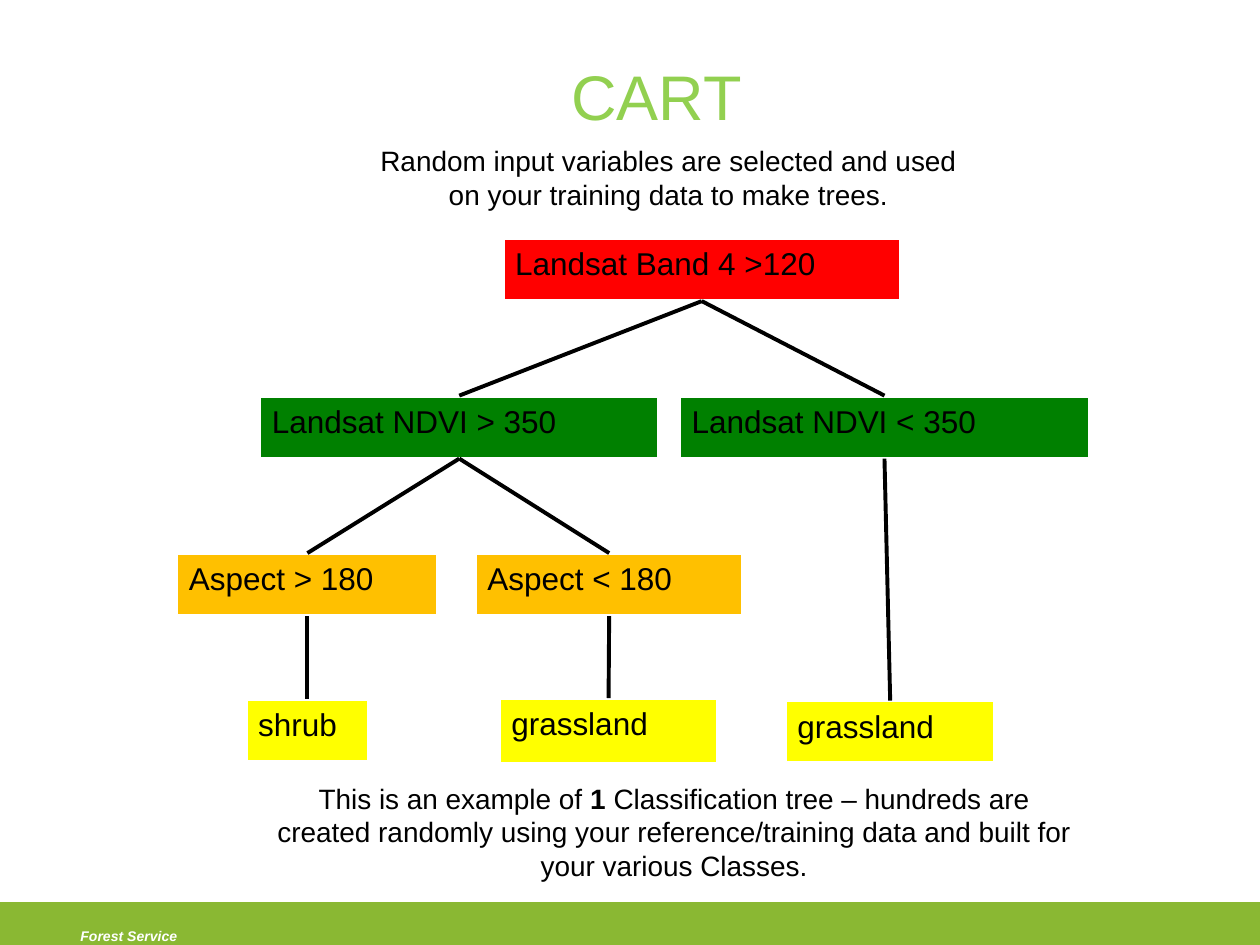
import pptx
import pptx.dml.color
import pptx.enum.shapes
import pptx.enum.text
import pptx.oxml.ns
import pptx.util
from lxml import etree

COLS, ROWS = 100, 75
PITCH = pptx.util.Inches(0.1)
COLORS = {"black": "000000", "white": "FFFFFF", "title": "92D050", "bar": "8AB833",
          "root": "FF0000", "ndvi": "008000", "aspect": "FFC000", "leaf": "FFFF00"}
ALIGN = pptx.enum.text.PP_ALIGN
ANCHOR = pptx.enum.text.MSO_ANCHOR

# name: text, colour, column, row, columns wide, rows high, parent
NODES = {
    "band": ("Landsat Band 4 >120", "root", 25.9, 0, 31.6, 5, None),
    "ndvi_high": ("Landsat NDVI > 350", "ndvi", 6.6, 12.5, 31.7, 5, "band"),
    "ndvi_low": ("Landsat NDVI < 350", "ndvi", 39.9, 12.5, 32.6, 5, "band"),
    "aspect_high": ("Aspect > 180", "aspect", 0, 25, 20.8, 5, "ndvi_high"),
    "aspect_low": ("Aspect < 180", "aspect", 23.7, 25, 21.3, 5, "ndvi_high"),
    "shrub": ("shrub", "leaf", 5.5, 36.6, 9.8, 5, "aspect_high"),
    "grass_mid": ("grassland", "leaf", 25.6, 36.5, 17.4, 5.2, "aspect_low"),
    "grass_right": ("grassland", "leaf", 48.3, 36.7, 16.7, 5, "ndvi_low"),
}


def rgb(name):
    """Return the named colour."""
    return pptx.dml.color.RGBColor.from_string(COLORS[name])


def emu(box):
    """Turn a box in columns and rows into slide lengths."""
    return [round(v * PITCH) for v in box]


def write(s, runs, color="black", align=ALIGN.LEFT, anchor=ANCHOR.TOP, **font):
    """Write one paragraph of (text, format) runs in a shape."""
    tf = s.text_frame
    tf.word_wrap, tf.vertical_anchor = True, anchor
    p = tf.paragraphs[0]
    p.alignment = align
    for text, extra in runs:
        r = p.add_run()
        r.text = text
        r.font.color.rgb = rgb(color)
        for key, value in {"name": "Arial", **font, **extra}.items():
            setattr(r.font, key, value)


def add_rect(slide, box, fill, line, width):
    """Add a flat rectangle."""
    s = slide.shapes.add_shape(pptx.enum.shapes.MSO_SHAPE.RECTANGLE, *emu(box))
    s.shadow.inherit = False
    s.fill.solid()
    s.fill.fore_color.rgb = rgb(fill)
    s.line.color.rgb = rgb(line)
    s.line.width = pptx.util.Pt(width)
    return s


def add_branch(slide, parent, child):
    """Join the bottom of a parent node to the top of its child."""
    kind = pptx.enum.shapes.MSO_CONNECTOR.STRAIGHT
    c = slide.shapes.add_connector(kind, 0, 0, 0, 0)
    c.begin_connect(parent, 2)
    c.end_connect(child, 0)
    c.line.color.rgb = rgb("black")
    c.line.width = pptx.util.Pt(2.25)
    etree.SubElement(c._element.spPr, pptx.oxml.ns.qn("a:effectLst"))


def add_title(slide, box):
    """Place and format the title."""
    s = slide.shapes.title
    s.left, s.top, s.width, s.height = emu(box)
    write(s, [("CART", {})], "title", ALIGN.CENTER, ANCHOR.MIDDLE, size=pptx.util.Pt(36))


def add_note(slide, box, runs):
    """Add a centred line of explanation."""
    s = slide.shapes.add_textbox(*emu(box))
    write(s, runs, align=ALIGN.CENTER, size=pptx.util.Pt(16))


def add_tree(slide, box):
    """Draw the decision tree from the corner of its box."""
    x, y = box
    shapes = {}
    for name, (text, fill, col, row, w, h, parent) in NODES.items():
        s = add_rect(slide, (x + col, y + row, w, h), fill, "white", 2.25)
        write(s, [(text, {})], size=pptx.util.Pt(18))
        shapes[name] = s
        if parent:
            add_branch(slide, shapes[parent], s)


def add_footer(slide, box):
    """Draw the bar at the foot with the name of the service."""
    x, y, w, h = box
    add_rect(slide, box, "bar", "bar", 2.08)
    s = slide.shapes.add_textbox(*emu((x + 5.4, y + 1.4, 20.4, 2.4)))
    write(s, [("Forest Service", {})], "white", size=pptx.util.Pt(8), bold=True, italic=True)


def main():
    """Build the slide."""
    prs = pptx.Presentation()
    prs.slide_width, prs.slide_height = COLS * PITCH, ROWS * PITCH
    slide = prs.slides.add_slide(prs.slide_layouts[5])
    add_footer(slide, (0, 71.7, COLS, 3.6))
    add_title(slide, (7.5, 2.4, 89.2, 10.3))
    add_tree(slide, (14, 18.9))
    add_note(slide, (20.6, 61.5, 65.8, 9.1), [
        ("This is an example of ", {}),
        ("1 ", {"bold": True}),
        ("Classification tree – hundreds are created randomly using your "
         "reference/training data and built for your various Classes.", {})])
    add_note(slide, (28.9, 10.9, 48.3, 6.4), [
        ("Random input variables are selected and used on your training data "
         "to make trees.", {})])
    prs.save("out.pptx")


if __name__ == "__main__":
    main()
